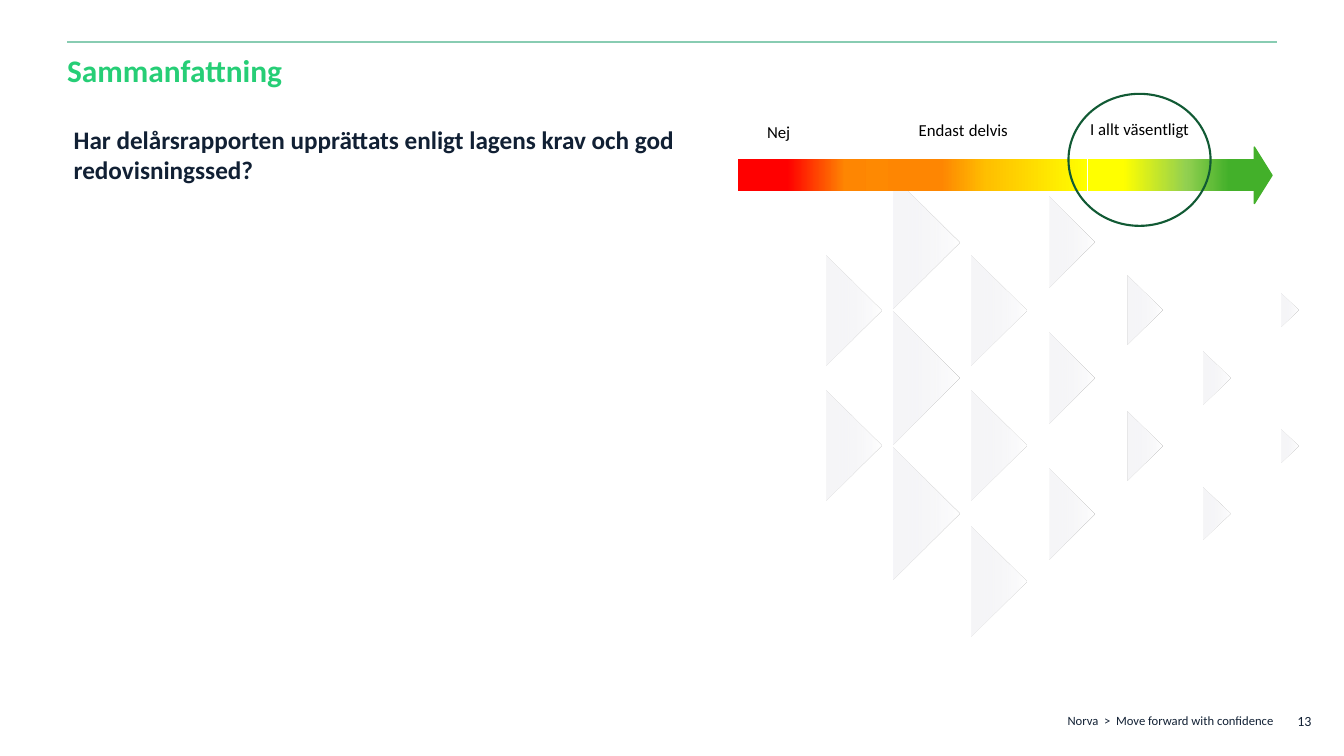
from lxml import etree
from pptx import Presentation, util as u
from pptx.dml.color import RGBColor
from pptx.enum import shapes, text
from pptx.oxml import ns

Pt = u.Pt
SHAPE, ALIGN, ANCHOR = shapes.MSO_SHAPE, text.PP_ALIGN, text.MSO_ANCHOR
NAVY, MINT, GREEN, FOREST = "112034", "26CE76", "43B02A", "115A34"
RED, ORANGE, AMBER, YELLOW, LIME = "FF0000", "FE8602", "FFC000", "FFFF00", "92D050"


def colour(hex_code):
    return RGBColor.from_string(hex_code)


def write(frame, words, size=12, hue="000000", bold=False, align=ALIGN.LEFT,
          anchor=ANCHOR.TOP, inset=(0, 0), spacing=1.0, after=0):
    """Put one paragraph into a frame; words is a list of (text, font, size) or a string."""
    frame.word_wrap, frame.auto_size = True, text.MSO_AUTO_SIZE.NONE
    frame.vertical_anchor = anchor
    frame.margin_left = frame.margin_right = Pt(inset[0])
    frame.margin_top = frame.margin_bottom = Pt(inset[1])
    line = frame.paragraphs[0]
    props = line._p.get_or_add_pPr()
    props.set("marL", "0")
    props.set("indent", "0")
    line.alignment, line.line_spacing = align, spacing
    line.space_before, line.space_after = Pt(0), Pt(after)
    etree.SubElement(props, ns.qn("a:buNone"))
    runs = [(words, "Calibri", size)] if isinstance(words, str) else words
    for wording, font, points in runs:
        run = line.add_run()
        run.text = wording
        run.font.name, run.font.size, run.font.bold = font, Pt(points), bold
        run.font.color.rgb = colour(hue)


class Slide:
    def __init__(self, deck):
        self.slide = deck.slides.add_slide(deck.slide_layouts[1])
        self.items = self.slide.shapes

    def placeholder(self, index, box, words, **style):
        holder = self.slide.placeholders[index]
        holder.left, holder.top, holder.width, holder.height = map(Pt, box)
        write(holder.text_frame, words, **style)

    def label(self, box, words, **style):
        write(self.items.add_textbox(*map(Pt, box)).text_frame, words, **style)

    def shape(self, kind, box, fill=None, line=None, weight=1.0):
        item = self.items.add_shape(kind, *map(Pt, box))
        item.shadow.inherit = False
        if fill:
            item.fill.solid()
            item.fill.fore_color.rgb = colour(fill)
        else:
            item.fill.background()
        if line:
            item.line.color.rgb = colour(line)
            item.line.width = Pt(weight)
        else:
            item.line.fill.background()
        return item

    def gradient(self, kind, box, stops, angle):
        """Stops are (position, colour) or (position, colour, opacity), in percent."""
        item = self.shape(kind, box)
        item.fill.gradient()
        grad = item._element.spPr.find(ns.qn("a:gradFill"))
        grad.find(ns.qn("a:lin")).set("ang", str(angle * 60000))
        stop_list = grad.find(ns.qn("a:gsLst"))
        for old in list(stop_list):
            stop_list.remove(old)
        for position, hue, *opacity in stops:
            stop = etree.SubElement(stop_list, ns.qn("a:gs"), pos=str(position * 1000))
            tint = etree.SubElement(stop, ns.qn("a:srgbClr"), val=hue)
            for share in opacity:
                etree.SubElement(tint, ns.qn("a:alpha"), val=str(share * 1000))
        return item

    def rule(self, left, right, y, hue, weight):
        line = self.items.add_connector(shapes.MSO_CONNECTOR.STRAIGHT,
                                        Pt(left), Pt(y), Pt(right), Pt(y))
        line.line.color.rgb, line.line.width = colour(hue), Pt(weight)
        etree.SubElement(line._element.spPr, ns.qn("a:effectLst"))


def main():
    deck = Presentation()
    deck.slide_width, deck.slide_height = Pt(960), Pt(540)
    page = Slide(deck)

    # Background triangles: evenly spaced columns on staggered rows
    columns = [(78.5, 1, 2), (94.3, 0, 3), (78.5, 1, 3), (64.8, 0, 3),
               (49.7, 1, 2), (37.4, 2, 2), (23.8, 1, 2)]
    for column, (side, first_row, count) in enumerate(columns):
        x = 610.2 + 51.83 * column
        for row in range(first_row, first_row + 2 * count, 2):
            y = 173 + 48.5 * row
            triangle = page.gradient(SHAPE.ISOSCELES_TRIANGLE,
                                     (x - side / 2, y - side / 4, side, side / 2),
                                     [(0, "FFFFFF"), (80, "ECECF1", 47)], 90)
            triangle.rotation = 90

    # Header and footer
    page.rule(48, 912, 30, "88CCB2", 1.5)
    page.placeholder(0, (48, 37.4, 864, 28.8), "Sammanfattning", size=22.4, hue=MINT,
                     bold=True, anchor=ANCHOR.BOTTOM, inset=(0, 3.6), spacing=0.7)
    page.label((714.2, 505.4, 202.3, 18), "Norva  >  Move forward with confidence",
               size=9, hue=NAVY, align=ALIGN.RIGHT, inset=(7.2, 3.6))
    page.label((910.1, 500.4, 33.8, 28.8), "13", size=10, hue=NAVY, align=ALIGN.RIGHT,
               anchor=ANCHOR.MIDDLE, inset=(7.2, 3.6))

    # Question
    page.placeholder(1, (52.6, 85, 441.4, 73.4),
                     "Har delårsrapporten upprättats enligt lagens krav och god redovisningssed?",
                     size=18, hue=NAVY, bold=True, inset=(0, 3.6))

    # Assessment scale
    page.shape(SHAPE.RIGHT_ARROW, (883.4, 105.1, 25.2, 40.3), GREEN, GREEN)
    scale = [
        (91.4, 0, [(39, RED), (84, ORANGE), (92, ORANGE), (100, ORANGE)]),
        (158.4, 180, [(0, YELLOW), (45, AMBER), (66, ORANGE), (90, "FE8902"), (100, ORANGE)]),
        (121.7, 0, [(21, YELLOW), (58, LIME), (83, GREEN), (100, GREEN)]),
    ]
    left = 527
    for width, angle, stops in scale:
        page.gradient(SHAPE.RECTANGLE, (left, 113.8, width, 22.3), stops, angle)
        left += width
    partly = [("Endast", "Calibri", 12), (" ", "Arial", 11), ("delvis", "Calibri", 12)]
    for x, y, answer in [(639.4, 85.7, partly), (765.4, 85, "I allt väsentligt"),
                         (507.6, 87.1, "Nej")]:
        page.label((x, y, 97.2, 22.3), answer, align=ALIGN.CENTER, after=6)

    # Ring around the chosen answer
    page.shape(SHAPE.OVAL, (763.2, 67, 101.5, 94.3), line=FOREST, weight=1.5)

    deck.save("out.pptx")


if __name__ == "__main__":
    main()
